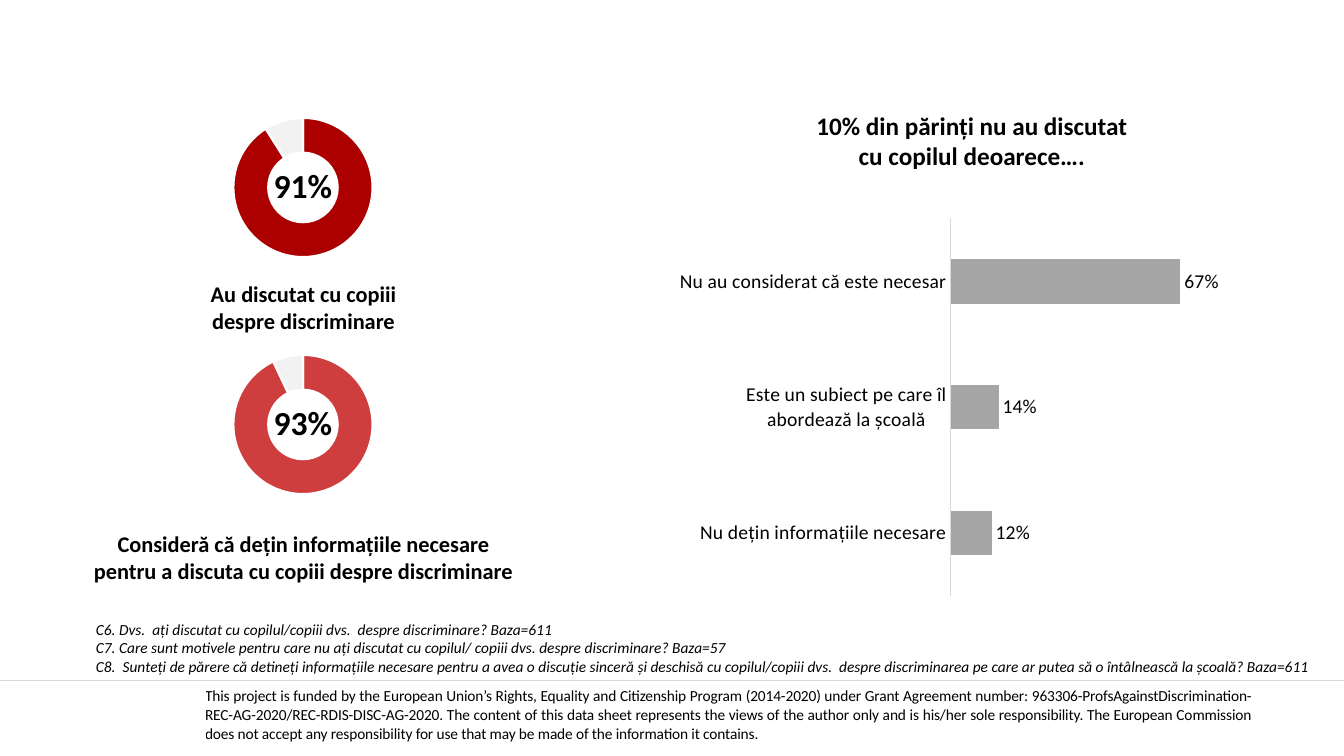
from lxml.etree import SubElement
from pptx import Presentation
from pptx.chart.data import CategoryChartData
from pptx.dml.color import RGBColor
from pptx.enum.chart import XL_CHART_TYPE, XL_LABEL_POSITION, XL_TICK_MARK
from pptx.enum.shapes import MSO_CONNECTOR
from pptx.enum.text import MSO_ANCHOR, MSO_AUTO_SIZE, PP_ALIGN
from pptx.oxml import parse_xml
from pptx.oxml.ns import nsdecls, qn
from pptx.util import Emu, Pt

FONT = "Calibri"
BLACK, WHITE, PALE, RULE, BAR = "000000", "FFFFFF", "F2F2F2", "D9D9D9", "A6A6A6"
RINGS = [
    (104, 91, "AC0000", (198, 275, 211, 65),
     ["Au discutat cu copiii", "despre discriminare"]),
    (341, 93, "CE3E3E", (81, 525, 445, 65),
     ["Consideră că dețin informațiile necesare",
      "pentru a discuta cu copiii despre discriminare"]),
]
REASONS = {
    "Nu au considerat că este necesar": 0.67,
    "Este un subiect pe care îl abordează la școală": 0.14,
    "Nu dețin informațiile necesare": 0.12,
}
QUESTIONS = [
    "C6. Dvs.  ați discutat cu copilul/copiii dvs.  despre discriminare? Baza=611",
    "C7. Care sunt motivele pentru care nu ați discutat cu copilul/ copiii dvs. "
    "despre discriminare? Baza=57",
    "C8.  Sunteți de părere că detineți informațiile necesare pentru a avea o discuție "
    "sinceră și deschisă cu copilul/copiii dvs.  despre discriminarea pe care ar putea "
    "să o întâlnească la școală? Baza=611",
]
FUNDING = (
    "This project is funded by the European Union’s Rights, Equality and Citizenship "
    "Program (2014-2020) under Grant Agreement number: "
    "963306-ProfsAgainstDiscrimination-REC-AG-2020/REC-RDIS-DISC-AG-2020. The content "
    "of this data sheet represents the views of the author only and is his/her sole "
    "responsibility. The European Commission does not accept any responsibility for "
    "use that may be made of the information it contains."
)


def px(n):
    """Turn pixels into EMU."""
    return Emu(round(n * 914400 / 100.8))


def rgb(color):
    """Turn a hex string into a colour."""
    return RGBColor.from_string(color)


def style_font(font, size):
    """Set the shared typeface, size and colour."""
    font.name, font.size = FONT, Pt(size)
    font.color.rgb = rgb(BLACK)


def write(tf, lines, size, align, bold=False, italic=False):
    """Write one paragraph per line into a text frame."""
    for i, line in enumerate(lines):
        p = tf.add_paragraph() if i else tf.paragraphs[0]
        p.alignment = align
        r = p.add_run()
        r.text = line
        style_font(r.font, size)
        r.font.bold, r.font.italic = bold, italic


def add_text(slide, box, lines, size, align=PP_ALIGN.CENTER, wrap=False, **style):
    """Add a text box."""
    tf = slide.shapes.add_textbox(*map(px, box)).text_frame
    tf.word_wrap = wrap
    write(tf, lines, size, align, **style)


def add_heading(slide, box, lines):
    """Move and fill the title placeholder."""
    sp = slide.shapes.title
    sp.left, sp.top, sp.width, sp.height = map(px, box)
    tf = sp.text_frame
    tf.word_wrap, tf.auto_size = False, MSO_AUTO_SIZE.NONE
    tf.vertical_anchor = MSO_ANCHOR.TOP
    write(tf, lines, 18, PP_ALIGN.CENTER, bold=True)


def add_chart(slide, kind, box, cats, vals):
    """Add a chart with one series and no title or legend."""
    data = CategoryChartData()
    data.categories = cats
    data.add_series("Series 1", vals)
    chart = slide.shapes.add_chart(kind, *map(px, box), data).chart
    chart.has_title = chart.has_legend = False
    style_font(chart.font, 10)
    return chart


def add_ring(slide, top, share, color, caption_box, caption):
    """Add a doughnut with its percentage and caption."""
    chart = add_chart(slide, XL_CHART_TYPE.DOUGHNUT, (161, top, 284, 167),
                      ["1", "2"], [share, 100 - share])
    plot = chart.plots[0]
    for i, fill in enumerate([color, PALE]):
        fmt = plot.series[0].points[i].format
        fmt.fill.solid()
        fmt.fill.fore_color.rgb = rgb(fill)
        fmt.line.color.rgb = rgb(WHITE)
        fmt.line.width = Pt(1.5)
    chart.element.find(".//" + qn("c:holeSize")).set("val", "56")
    add_text(slide, (263, top + 56, 80, 50), [f"{share}%"], 24, bold=True)
    add_text(slide, caption_box, caption, 16, bold=True)


def set_plot_area(chart, **place):
    """Fix the inner plot area as fractions of the chart."""
    area = chart.element.find(".//" + qn("c:plotArea"))
    for old in area.findall(qn("c:layout")):
        area.remove(old)
    parts = [("layoutTarget", "inner"), ("xMode", "edge"), ("yMode", "edge"),
             *place.items()]
    tags = "".join(f'<c:{name} val="{val}"/>' for name, val in parts)
    area.insert(0, parse_xml(f'<c:layout {nsdecls("c")}><c:manualLayout>{tags}'
                             '</c:manualLayout></c:layout>'))


def add_reasons(slide, box):
    """Add the bar chart of reasons."""
    chart = add_chart(slide, XL_CHART_TYPE.BAR_CLUSTERED, box,
                      REASONS.keys(), REASONS.values())
    set_plot_area(chart, x=0.465, y=0.038, w=0.45, h=0.925)
    cat, val = chart.category_axis, chart.value_axis
    cat.reverse_order = True
    cat.major_tick_mark = cat.minor_tick_mark = XL_TICK_MARK.NONE
    cat.format.line.color.rgb = rgb(RULE)
    cat.format.line.width = Pt(0.75)
    style_font(cat.tick_labels.font, 14)
    val.minimum_scale, val.maximum_scale = 0, 0.8
    val.has_major_gridlines = val.visible = False
    plot = chart.plots[0]
    plot.gap_width, plot.vary_by_categories = 182, False
    fill = plot.series[0].format.fill
    fill.solid()
    fill.fore_color.rgb = rgb(BAR)
    labels = plot.series[0].data_labels
    labels.show_value = True
    labels.position = XL_LABEL_POSITION.OUTSIDE_END
    labels.number_format, labels.number_format_is_linked = "###0%", False
    style_font(labels.font, 14)


def add_funding(slide, box):
    """Add the funding note as a plain one-cell table."""
    table = slide.shapes.add_table(1, 1, *map(px, box)).table
    table.first_row = table.horz_banding = False
    cell = table.cell(0, 0)
    cell.fill.background()
    cell.vertical_anchor = MSO_ANCHOR.MIDDLE
    cell.margin_left = cell.margin_right = cell.margin_top = cell.margin_bottom = 0
    write(cell.text_frame, [FUNDING], 11, PP_ALIGN.JUSTIFY)
    cell.text_frame.paragraphs[0].runs[0].font._element.set("spc", "-10")


def add_rule(slide, y, width):
    """Add a thin rule across the slide."""
    line = slide.shapes.add_connector(MSO_CONNECTOR.STRAIGHT, 0, px(y), px(width), px(y))
    line.line.color.rgb = rgb(RULE)
    line.line.width = Pt(0.5)
    SubElement(line._element.spPr, qn("a:effectLst"))


def main():
    """Build and save the slide."""
    prs = Presentation()
    prs.slide_width, prs.slide_height = px(1344), px(756)
    slide = prs.slides.add_slide(prs.slide_layouts[5])
    add_funding(slide, (205, 663, 1047, 105))
    for ring in RINGS:
        add_ring(slide, *ring)
    add_heading(slide, (802, 105, 340, 72),
                ["10% din părinți nu au discutat", "cu copilul deoarece…."])
    add_reasons(slide, (667, 203, 610, 408))
    add_rule(slide, 680, 1344)
    add_text(slide, (86, 615, 1253, 67), QUESTIONS, 11, PP_ALIGN.LEFT,
             wrap=True, italic=True)
    prs.save("out.pptx")


if __name__ == "__main__":
    main()
